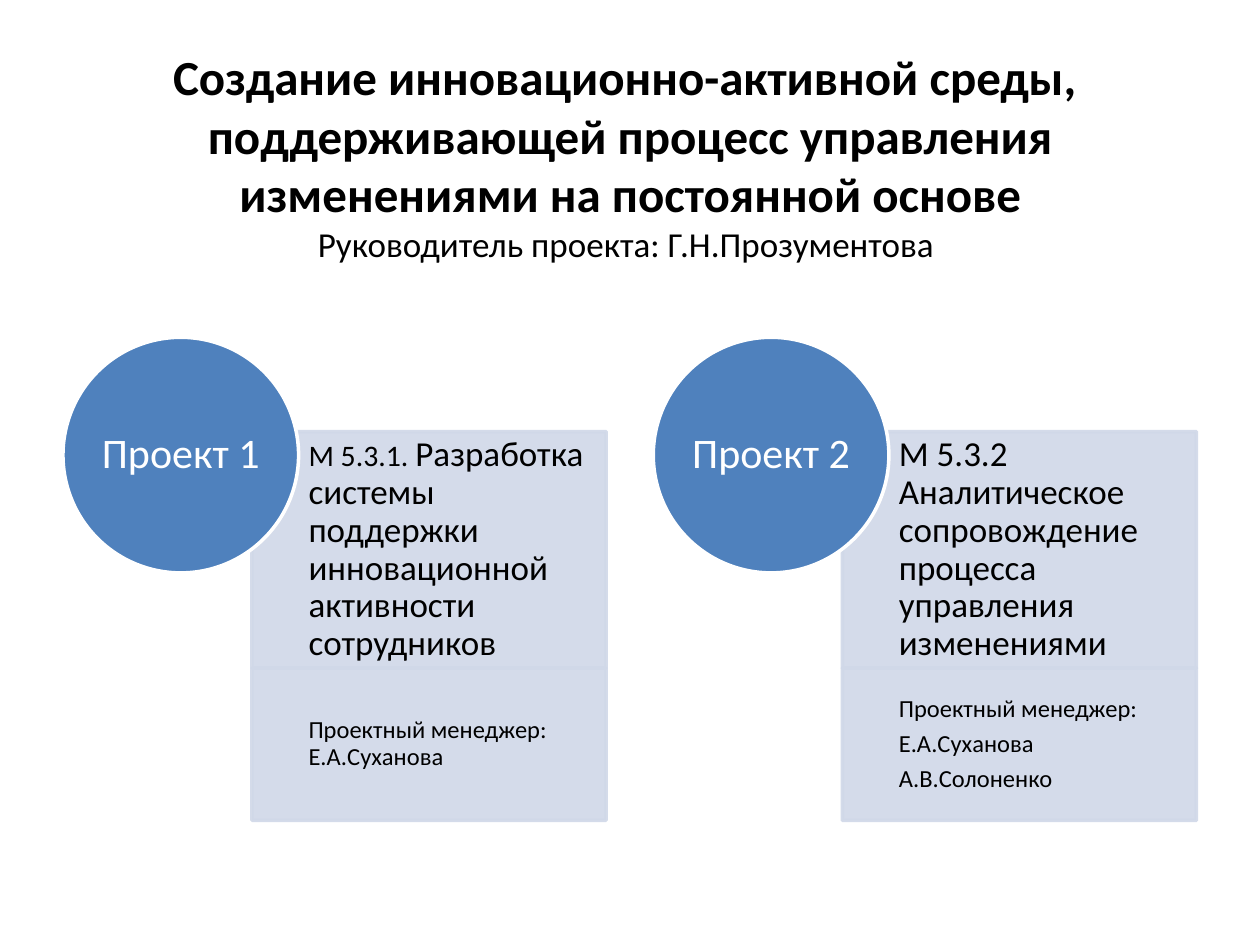
import pptx
import pptx.util
import pptx.dml.color
import pptx.enum.shapes
import pptx.enum.text
import pptx.oxml
import pptx.oxml.ns
import lxml.etree

Cm, Pt = pptx.util.Cm, pptx.util.Pt
SHAPE = pptx.enum.shapes.MSO_SHAPE
ALIGN = pptx.enum.text.PP_ALIGN
MIDDLE = pptx.enum.text.MSO_ANCHOR.MIDDLE
qn = pptx.oxml.ns.qn


def paint(item, color):
    item.solid()
    item.fore_color.rgb = pptx.dml.color.RGBColor.from_string(color)


def add_part(kind, box, fill, edge, lines, sizes, ink, align, pads):
    part = slide.shapes.add_shape(kind, *[Cm(n) for n in box])
    part.shadow.inherit = False
    paint(part.fill, fill)
    paint(part.line.fill, edge)
    part.line.width = Pt(2)
    frame = part.text_frame
    frame.word_wrap = True
    frame.vertical_anchor = MIDDLE
    frame.margin_left, frame.margin_right = Cm(pads[0]), Cm(pads[1])
    frame.margin_top = frame.margin_bottom = Cm(pads[1])
    for i, line in enumerate(lines):
        para = frame.paragraphs[0] if i == 0 else frame.add_paragraph()
        para.alignment = align
        para.line_spacing = 0.9
        para.space_after = Pt(round(sizes[-1] * 0.35))
        for text, size in zip(line, sizes):
            run = para.add_run()
            run.text = text
            run.font.name = "Calibri"
            run.font.size = Pt(size)
            paint(run.font.fill, ink)
    return part


deck = pptx.Presentation()
deck.slide_width, deck.slide_height = Cm(25.4), Cm(19.05)
slide = deck.slides.add_slide(deck.slide_layouts[5])

# Title with the project lead on its last line
title = slide.shapes.title
title.left, title.top, title.width, title.height = Cm(1.27), Cm(0.76), Cm(22.86), Cm(4.75)
title.text_frame.vertical_anchor = MIDDLE
para = title.text_frame.paragraphs[0]
para.text = ("Создание инновационно-активной среды, \v"
             "поддерживающей процесс управления изменениями на постоянной основе\v"
             "Руководитель проекта: Г.Н.Прозументова ")
para.alignment = ALIGN.CENTER
for run, size in zip(para.runs, (28, 28, 20)):
    run.font.name = "Calibri"
    run.font.size = Pt(size)
    run.font.bold = size == 28
    paint(run.font.fill, "000000")
# Line breaks take the heading size
for brk in para._p.findall(qn("a:br")):
    lxml.etree.SubElement(brk, qn("a:rPr")).set("sz", "2800")

# Projects: name, task runs, task sizes, task padding, manager lines
projects = [
    ("Проект 1",
     ["М 5.3.1. ", "Разработка системы поддержки инновационной активности сотрудников"],
     (17, 20), 0.33, ["Проектный менеджер: Е.А.Суханова"]),
    ("Проект 2",
     ["М 5.3.2 Аналитическое сопровождение процесса управления изменениями"],
     (20,), 0.4, ["Проектный менеджер:", "Е.А.Суханова", "А.В.Солоненко"]),
]
for i, (name, task, sizes, pad, staff) in enumerate(projects):
    left = 1.27 + i * 11.9
    # Task panel above the manager panel
    panels = [
        (8.7, 4.77, [task], sizes, pad),
        (13.47, 3.07, [[line] for line in staff], (14,), 0.28),
    ]
    for top, height, lines, points, gap in panels:
        panel = add_part(SHAPE.RECTANGLE, (left + 3.81, top, 7.14, height),
                         "D0D8E8", "D0D8E8", lines, points, "000000",
                         ALIGN.LEFT, (1.14, gap))
        # Slight transparency of fill and line
        for color in panel._element.spPr.iter(qn("a:srgbClr")):
            lxml.etree.SubElement(color, qn("a:alpha")).set("val", "90000")
    # Round label over the panel corner
    add_part(SHAPE.OVAL, (left, 6.8, 4.75, 4.75), "4F81BD", "FFFFFF",
             [[name]], (24,), "FFFFFF", ALIGN.CENTER, (0, 0))

deck.save("out.pptx")
